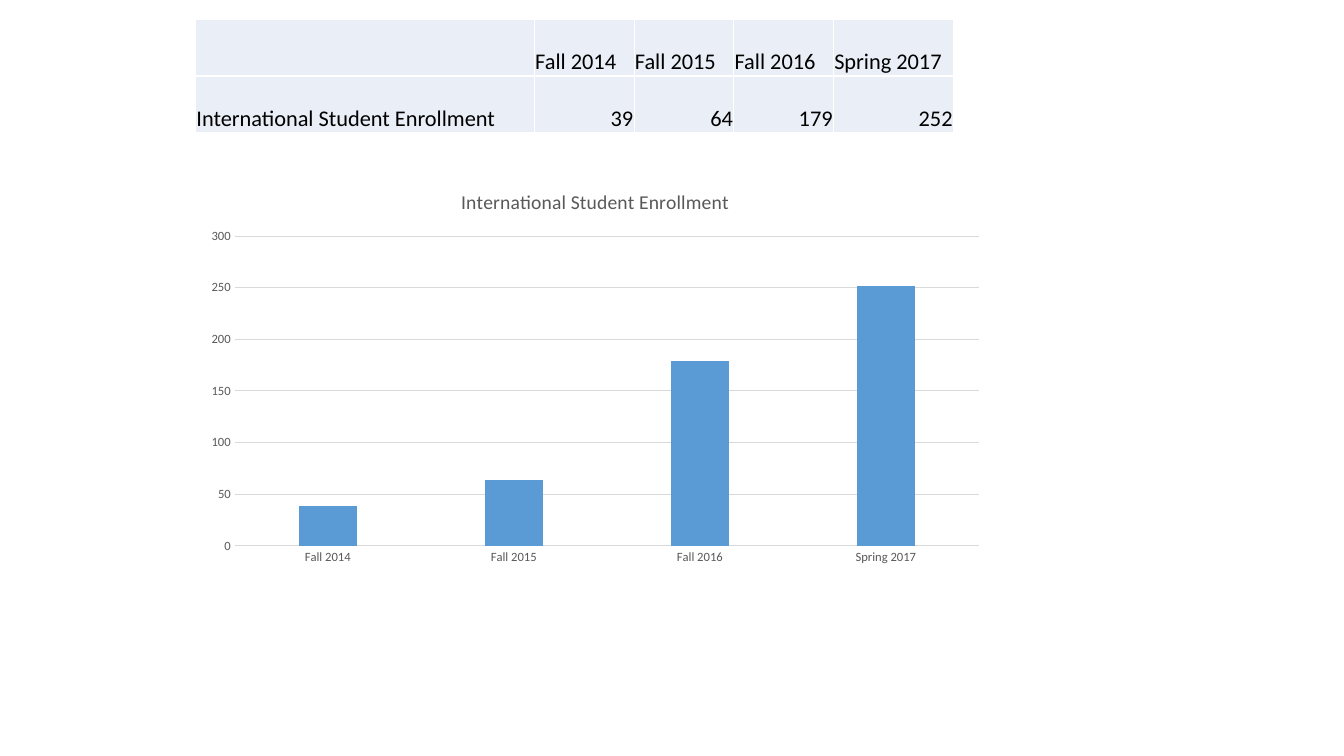
from lxml.etree import fromstring
from pptx import Presentation
from pptx.chart.data import CategoryChartData
from pptx.dml.color import RGBColor
from pptx.enum.chart import XL_CHART_TYPE, XL_TICK_MARK
from pptx.enum.text import MSO_ANCHOR, PP_ALIGN
from pptx.util import Cm, Pt

HUES = {"cell": "EAEFF7", "edge": "FFFFFF", "ink": "000000",
        "gray": "595959", "grid": "D9D9D9", "bar": "5B9BD5"}
TERMS = ["Fall 2014", "Fall 2015", "Fall 2016", "Spring 2017"]
COUNTS = [39, 64, 179, 252]
LABEL = "International Student Enrollment"
FACE = "Calibri"
SPACE = "http://schemas.openxmlformats.org/drawingml/2006/main"


def hue(name):
    """Return the named colour."""
    return RGBColor.from_string(HUES[name])


def apply(item, look):
    """Set each attribute of item from a dict."""
    for key, value in look.items():
        setattr(item, key, value)


def style(font, size, color):
    """Format a font."""
    apply(font, {"name": FACE, "size": Pt(size), "bold": False})
    font.color.rgb = hue(color)


def rule(line):
    """Format a thin chart line."""
    line.width = Pt(0.75)
    line.color.rgb = hue("grid")


def edge(cell):
    """Give a cell four thin borders."""
    props = cell._tc.get_or_add_tcPr()
    for spot, side in enumerate("LRTB"):
        props.insert(spot, fromstring(
            f'<a:ln{side} xmlns:a="{SPACE}" w="{Pt(1)}"><a:solidFill>'
            f'<a:srgbClr val="{HUES["edge"]}"/></a:solidFill></a:ln{side}>'))


def draw_table(slide, left, top, width, height):
    """Place the enrollment table in the box."""
    rows = [["", *TERMS], [LABEL, *COUNTS]]
    table = slide.shapes.add_table(2, 5, left, top, width, height).table
    apply(table, {"first_row": False, "horz_banding": False})
    parts = [8.53, 2.51, 2.51, 2.51, 3.02]
    for col, part in zip(table.columns, parts):
        col.width = int(width * part / sum(parts))
    look = {"vertical_anchor": MSO_ANCHOR.BOTTOM, "margin_left": Cm(0.02),
            "margin_right": Cm(0.02), "margin_top": Cm(0.02), "margin_bottom": 0}
    for y, row in enumerate(rows):
        for x, value in enumerate(row):
            cell = table.cell(y, x)
            apply(cell, look)
            cell.fill.solid()
            cell.fill.fore_color.rgb = hue("cell")
            edge(cell)
            para = cell.text_frame.paragraphs[0]
            if value != "":
                run = para.add_run()
                run.text = str(value)
                style(run.font, 16, "ink")
            if isinstance(value, int):
                para.alignment = PP_ALIGN.RIGHT


def draw_chart(slide, left, top, width, height):
    """Place the enrollment column chart in the box."""
    data = CategoryChartData()
    data.categories = TERMS
    data.add_series(LABEL, COUNTS)
    chart = slide.shapes.add_chart(
        XL_CHART_TYPE.COLUMN_CLUSTERED, left, top, width, height, data).chart
    style(chart.font, 10, "ink")
    apply(chart, {"has_legend": False, "has_title": True})
    frame = chart.chart_title.text_frame
    frame.text = LABEL
    style(frame.paragraphs[0].runs[0].font, 14, "gray")
    chart.chart_title.include_in_layout = False
    plot = chart.plots[0]
    apply(plot, {"gap_width": 219, "overlap": -27, "vary_by_categories": False})
    fill = plot.series[0].format.fill
    fill.solid()
    fill.fore_color.rgb = hue("bar")
    for axis in (chart.category_axis, chart.value_axis):
        apply(axis, {"major_tick_mark": XL_TICK_MARK.NONE,
                     "minor_tick_mark": XL_TICK_MARK.NONE})
        style(axis.tick_labels.font, 9, "gray")
    rule(chart.category_axis.format.line)
    apply(chart.value_axis, {"minimum_scale": 0, "maximum_scale": 300,
                             "major_unit": 50})
    chart.value_axis.format.line.fill.background()
    rule(chart.value_axis.major_gridlines.format.line)


def main():
    """Build and save the slide."""
    deck = Presentation()
    apply(deck, {"slide_width": Cm(33.87), "slide_height": Cm(19.05)})
    slide = deck.slides.add_slide(deck.slide_layouts[6])
    draw_table(slide, Cm(4.93), Cm(0.48), Cm(19.1), Cm(2.87))
    draw_chart(slide, Cm(4.93), Cm(4.32), Cm(20.14), Cm(10.11))
    deck.save("out.pptx")


if __name__ == "__main__":
    main()
